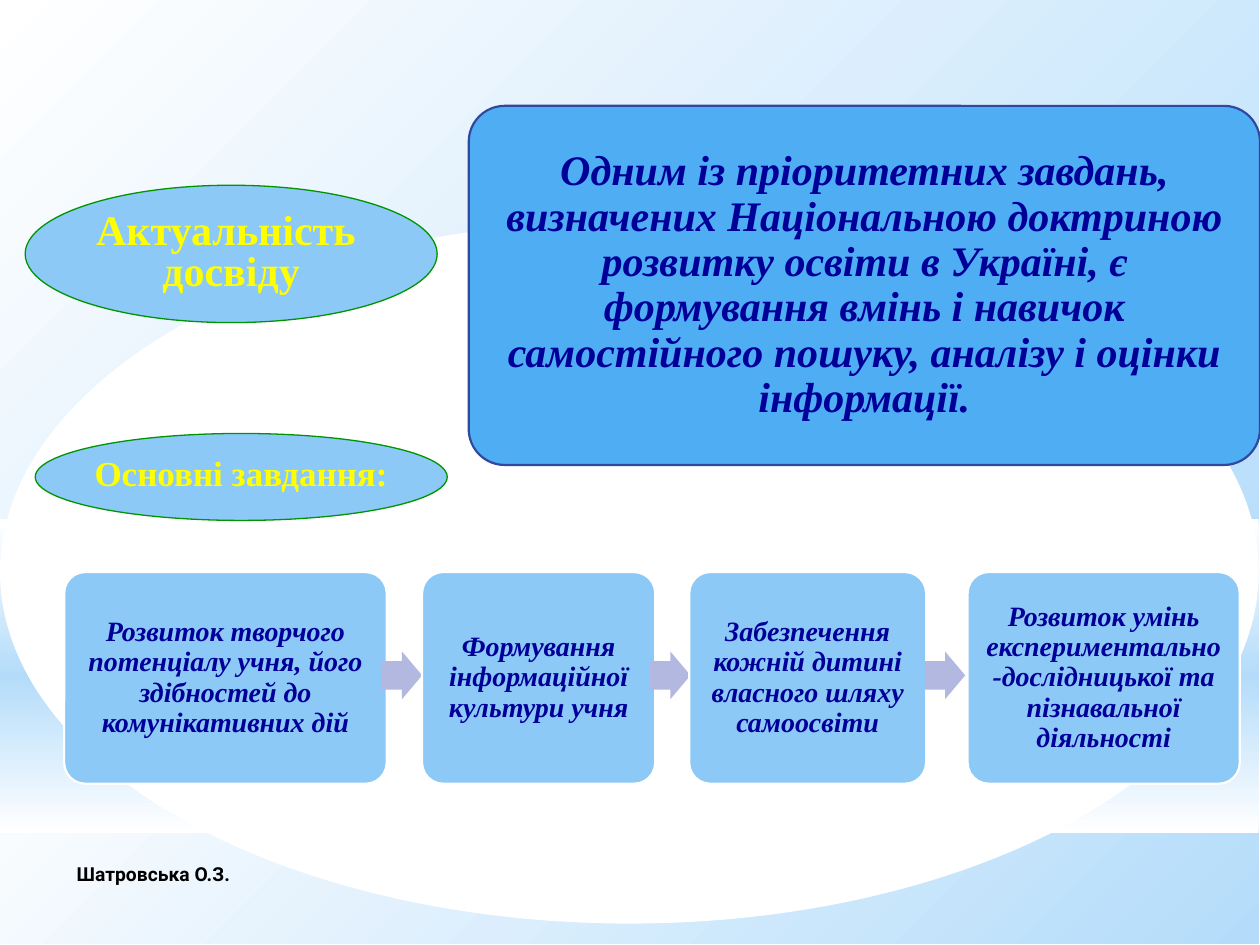
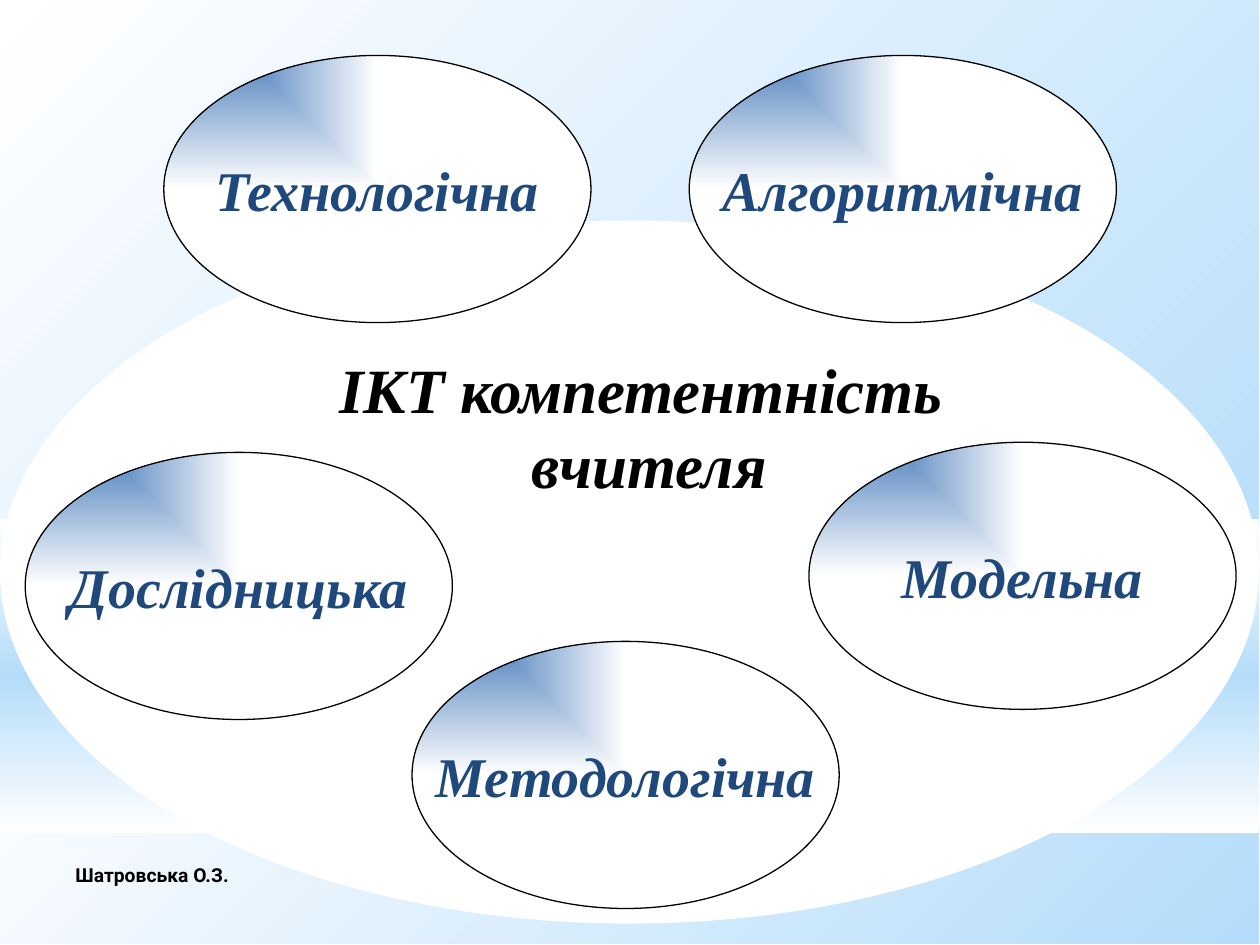
from lxml import etree
from pptx import Presentation
from pptx.dml.color import RGBColor
from pptx.enum.shapes import MSO_SHAPE as Preset
from pptx.enum.text import MSO_ANCHOR as Anchor, MSO_AUTO_SIZE as AutoSize, PP_ALIGN as Align
from pptx.oxml import parse_xml
from pptx.oxml.ns import qn
from pptx.util import Inches, Pt

COLORS = {
    "white": "FFFFFF", "black": "000000", "sky": "B4DCFA",
    "panel": "4FADF3", "panel_line": "31489F", "card": "8CC9F7",
    "arrow": "B2B8E0", "navy": "000099", "green": "009500",
    "yellow": "FFFF00", "blue": "4F81BD", "ink": "1F497D",
}
SERIF, SANS = "Times New Roman", "Roboto"
TITLE_ONLY, BLANK = 5, 6
DRAWING_NS = "http://schemas.openxmlformats.org/drawingml/2006/main"

# Layout of the task chain
CARD_TOP, CARD_HEIGHT = 4.54, 1.68
ARROW_WIDTH, ARROW_HEIGHT = 0.32, 0.38
ARROW_TOP = CARD_TOP + (CARD_HEIGHT - ARROW_HEIGHT) / 2 - 0.02
# Each task: text, card left, card width, left of the arrow that follows
TASKS = [
    ("Розвиток творчого потенціалу учня, його здібностей до комунікативних дій",
     0.51, 2.56, 3.03),
    ("Формування інформаційної культури учня", 3.35, 1.85, 5.16),
    ("Забезпечення кожній дитині власного шляху самоосвіти", 5.47, 1.88, 7.34),
    ("Розвиток умінь експериментально-дослідницької та пізнавальної діяльності",
     7.68, 2.16, None),
]
COMPETENCES = [
    ("Технологічна", 1.3, 0.44), ("Алгоритмічна", 5.47, 0.44),
    ("Модельна", 6.42, 3.51), ("Методологічна", 3.27, 5.09),
    ("Дослідницька", 0.2, 3.59),
]


def color(name):
    return RGBColor.from_string(COLORS[name])


def add_figure(page, preset, at, fill=None, line=None, width=0.75):
    figure = page.shapes.add_shape(preset, *[Inches(length) for length in at])
    figure.shadow.inherit = False
    if fill:
        figure.fill.solid()
        figure.fill.fore_color.rgb = color(fill)
    if line:
        figure.line.color.rgb = color(line)
        figure.line.width = Pt(width)
    else:
        figure.line.fill.background()
    return figure


def set_gradient(figure, names, direction):
    """Fill with evenly spaced colours; direction is the a:lin or a:path element."""
    figure.fill.background()
    properties = figure._element.spPr
    gradient = parse_xml(f'<a:gradFill xmlns:a="{DRAWING_NS}" rotWithShape="1">'
                         f'<a:gsLst/>{direction}</a:gradFill>')
    for index, name in enumerate(names):
        position = 100000 * index // (len(names) - 1)
        stop = etree.SubElement(gradient[0], qn("a:gs"), pos=str(position))
        etree.SubElement(stop, qn("a:srgbClr"), val=COLORS[name])
    properties.replace(properties.find(qn("a:noFill")), gradient)


def write(shape, lines, size, ink, font=SERIF, italic=False, align=Align.CENTER,
          spacing=1.0, anchor=Anchor.MIDDLE, wrap=True, inset=None):
    frame = shape.text_frame
    frame.auto_size = AutoSize.NONE
    frame.word_wrap = wrap
    frame.vertical_anchor = anchor
    if inset is not None:
        frame.margin_left = frame.margin_right = Inches(inset)
        frame.margin_top = frame.margin_bottom = Inches(inset)
    frame.text = "\n".join(lines)
    for para in frame.paragraphs:
        para.alignment = align
        para.line_spacing = spacing
        para.font.name = font
        para.font.size = Pt(size)
        para.font.bold = True
        para.font.italic = italic
        para.font.color.rgb = color(ink)


def add_card(page, at, text, size, fill, line, inset):
    card = add_figure(page, Preset.ROUNDED_RECTANGLE, at, fill, line, 1.25)
    card.adjustments[0] = 0.1
    write(card, [text], size, "navy", italic=True, spacing=0.9, inset=inset)


def add_arrow(page, left):
    arrow = add_figure(page, Preset.RIGHT_ARROW,
                       (left, ARROW_TOP, ARROW_WIDTH, ARROW_HEIGHT), "arrow")
    arrow.adjustments[0] = 0.6
    arrow.adjustments[1] = 0.5


def add_heading(page, at, lines, size):
    oval = add_figure(page, Preset.OVAL, at, "card", "green")
    write(oval, lines, size, "yellow", spacing=0.8, wrap=False)


def add_competence(page, text, left, top):
    oval = add_figure(page, Preset.OVAL, (left, top, 3.39, 2.12), line="black")
    set_gradient(oval, ["blue", "white"],
                 '<a:path path="rect"><a:fillToRect r="100000" b="100000"/></a:path>')
    write(oval, [text], 32, "ink", italic=True, wrap=False)


def add_author(page, left, top):
    box = page.shapes.add_textbox(Inches(left), Inches(top), Inches(3.66), Inches(0.39))
    write(box, ["Шатровська О.З."], 11, "black", font=SANS, align=Align.LEFT)


def add_backdrop(deck, page):
    """Draw the shared bands and oval, then move them to the slide master."""
    diagonal = '<a:lin ang="2700000" scaled="0"/>'
    vertical = '<a:lin ang="5400000" scaled="0"/>'
    bands = [
        (5.58, 1.91, ["white", "sky"], diagonal),
        (0, 5.58, ["white", "sky"], diagonal),
        (4.12, 2.49, ["white", "sky", "white"], vertical),
    ]
    figures = []
    for top, height, names, direction in bands:
        band = add_figure(page, Preset.RECTANGLE, (0, top, 9.99, height))
        set_gradient(band, names, direction)
        figures.append(band)
    figures.append(add_figure(page, Preset.OVAL, (0, 1.75, 9.99, 5.58), "white"))
    tree = deck.slide_master.shapes._spTree
    for index, figure in enumerate(figures):
        figure._element.nvSpPr.cNvPr.set("id", str(100 + index))
        tree.insert(2 + index, figure._element)


def build_relevance(page):
    add_card(page, (3.72, 0.84, 6.28, 2.85),
             "Одним із пріоритетних завдань, визначених Національною доктриною "
             "розвитку освіти в Україні, є формування вмінь і навичок самостійного "
             "пошуку, аналізу і оцінки інформації.", 24, "panel", "panel_line", 0.1)
    # Chain of tasks
    for text, left, width, arrow_left in TASKS:
        add_card(page, (left, CARD_TOP, width, CARD_HEIGHT), text, 16,
                 "card", "white", 0.07)
        if arrow_left is not None:
            add_arrow(page, arrow_left)
    # Oval headings
    add_heading(page, (0.2, 1.47, 3.27, 1.09), ["Актуальність ", "досвіду"], 24)
    add_heading(page, (0.28, 3.44, 3.27, 0.69), ["Основні завдання:"], 20)
    add_author(page, 0.51, 6.74)


def build_competence(page):
    title = page.shapes.title
    title.left, title.top = Inches(1.61), Inches(2.73)
    title.width, title.height = Inches(7.08), Inches(1.18)
    write(title, ["ІКТ компетентність ", "вчителя"], 36, "black", italic=True,
          anchor=Anchor.TOP, wrap=False)
    add_author(page, 0.5, 6.75)
    for text, left, top in COMPETENCES:
        add_competence(page, text, left, top)


def main():
    deck = Presentation()
    deck.slide_width, deck.slide_height = Inches(10), Inches(7.5)
    relevance = deck.slides.add_slide(deck.slide_layouts[BLANK])
    add_backdrop(deck, relevance)
    build_relevance(relevance)
    build_competence(deck.slides.add_slide(deck.slide_layouts[TITLE_ONLY]))
    deck.save("out.pptx")


if __name__ == "__main__":
    main()
